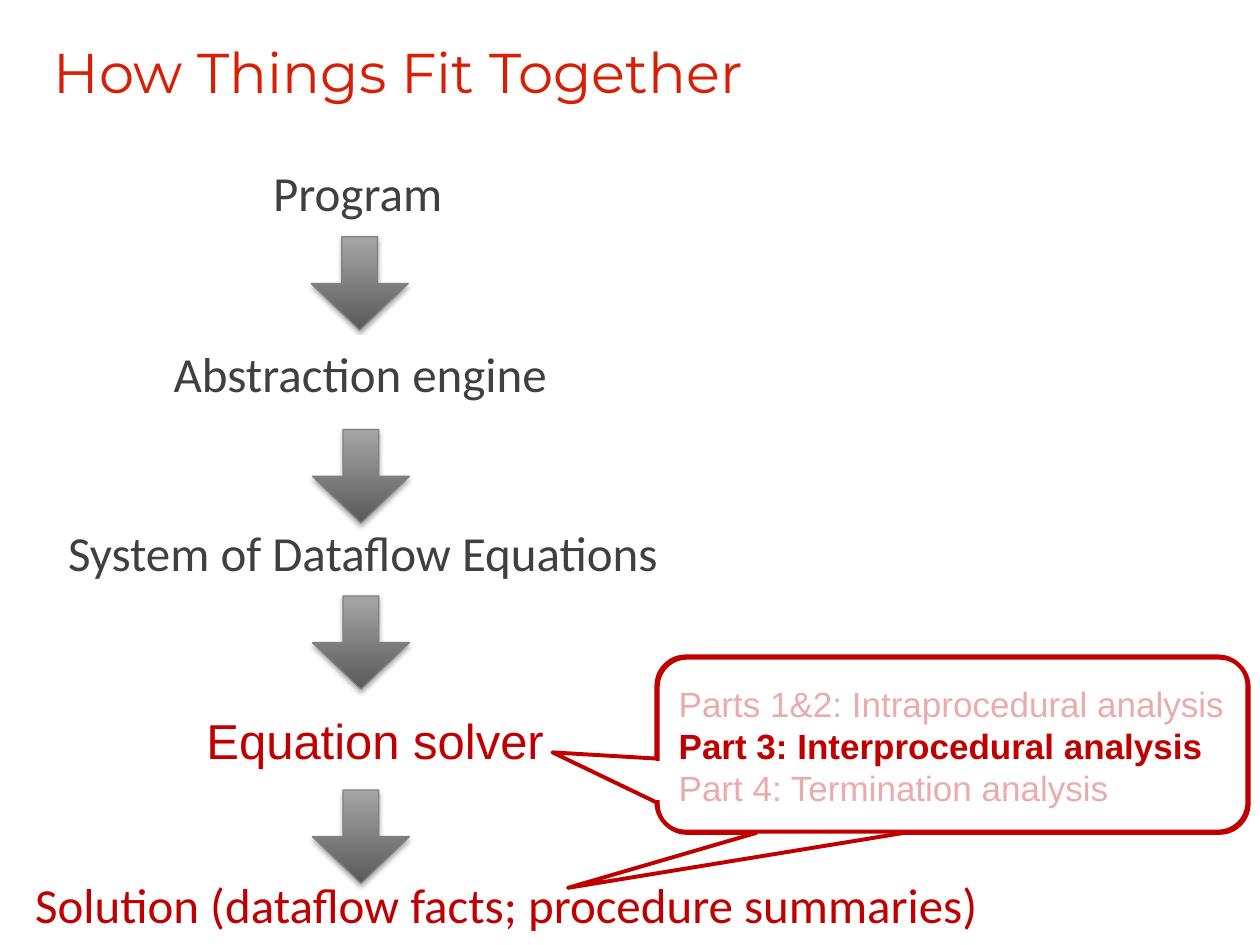
from lxml import etree
from pptx import Presentation
from pptx.dml.color import RGBColor
from pptx.enum.shapes import MSO_CONNECTOR, MSO_SHAPE
from pptx.enum.text import MSO_ANCHOR, MSO_AUTO_SIZE, PP_ALIGN
from pptx.oxml import parse_xml
from pptx.oxml.ns import nsdecls, qn
from pptx.util import Inches, Pt

ARROW = MSO_SHAPE.DOWN_ARROW
RECT = MSO_SHAPE.RECTANGLE
CALLOUT = MSO_SHAPE.ROUNDED_RECTANGULAR_CALLOUT
STRAIGHT = MSO_CONNECTOR.STRAIGHT
TOP, MIDDLE = MSO_ANCHOR.TOP, MSO_ANCHOR.MIDDLE
LEFT = PP_ALIGN.LEFT
NO_FIT = MSO_AUTO_SIZE.NONE
COLS, ROWS = 10, 7.5
PAD = (0.1, 0.05, 0.1, 0.05)
FLUSH = (0, 0, 0, 0)
WHITE, RED, GRAY = "FFFFFF", "C00000", "404040"


def color(value):
    return RGBColor.from_string(value)


class Flow:
    def __init__(self, prs):
        self.s = prs.slides.add_slide(prs.slide_layouts[6])
        self.shapes = self.s.shapes
        self.col = prs.slide_width / COLS
        self.row = prs.slide_height / ROWS

    def place(self, x, y, w, h):
        return [round(v) for v in (x * self.col, y * self.row, w * self.col, h * self.row)]

    def group(self):
        self.shapes = self.s.shapes.add_group_shape().shapes

    def label(self, sp, lines, size, font, ink, pad=PAD, anchor=TOP, wrap=True):
        tf = sp.text_frame
        tf.word_wrap = wrap
        tf.auto_size = NO_FIT
        tf.vertical_anchor = anchor
        tf.margin_left, tf.margin_top, tf.margin_right, tf.margin_bottom = map(Inches, pad)
        for i, (text, bold) in enumerate(lines):
            p = tf.paragraphs[0] if i == 0 else tf.add_paragraph()
            p.alignment = LEFT
            r = p.add_run()
            r.text = text
            r.font.name, r.font.size, r.font.bold = font, Pt(size), bold
            r.font.color.rgb = color(ink)

    def text(self, at, text, size=28, font="Calibri", ink=GRAY, pad=PAD):
        sp = self.shapes.add_textbox(*self.place(*at))
        self.label(sp, [(text, False)], size, font, ink, pad)

    def shape(self, kind, at, fill=None, line=None, width=1, alpha=None, adj=()):
        sp = self.shapes.add_shape(kind, *self.place(*at))
        sp.shadow.inherit = False
        for i, value in enumerate(adj):
            sp.adjustments[i] = value
        if fill:
            sp.fill.solid()
            sp.fill.fore_color.rgb = color(fill)
        else:
            sp.fill.background()
        if alpha:
            clr = sp._element.spPr.find(qn("a:solidFill"))[0]
            etree.SubElement(clr, qn("a:alpha"), val=str(alpha * 1000))
        if line:
            sp.line.color.rgb = color(line)
            sp.line.width = Pt(width)
        else:
            sp.line.fill.background()
        return sp

    def arrow(self, x, y):
        sp = self.shape(ARROW, (x, y, 0.77, 0.74), line="808080", width=0.75, adj=(0.369, 0.5))
        sp.fill.gradient()
        sp.fill.gradient_angle = 90
        for stop, value, pos in zip(sp.fill.gradient_stops, ("595959", "A6A6A6"), (0, 1)):
            stop.color.rgb = color(value)
            stop.position = pos
        effects = sp._element.spPr.find(qn("a:effectLst"))
        effects.append(parse_xml(
            f'<a:outerShdw {nsdecls("a")} blurRad="{Pt(3.1)}" dist="{Pt(1.8)}" '
            'dir="5400000" rotWithShape="0"><a:srgbClr val="000000">'
            '<a:alpha val="35000"/></a:srgbClr></a:outerShdw>'))

    def line(self, x, top, bottom, ink, width):
        ends = self.place(x, top, x, bottom)
        sp = self.shapes.add_connector(STRAIGHT, *ends)
        sp.line.color.rgb = color(ink)
        sp.line.width = Pt(width)
        etree.SubElement(sp._element.spPr, qn("a:effectLst"))

    def callout(self, at, tip):
        return self.shape(CALLOUT, at, line=RED, width=2.25, adj=(*tip, 0.167))


def main():
    prs = Presentation()
    prs.slide_width, prs.slide_height = Inches(10), Inches(7.5)
    flow = Flow(prs)

    flow.line(1, 7.05, 7.25, "EEECE1", 0.25)
    flow.text((0.33, 0.25, 9.42, 0.92), "How Things Fit Together", 32, "Montserrat", "D81E05")
    for x, y in ((2.47, 1.88), (2.48, 3.41), (2.48, 4.73), (2.48, 6.27)):
        flow.arrow(x, y)

    flow.text((2.07, 1.24, 1.66, 0.54), "Program")
    engine = flow.shape(RECT, (1.28, 2.68, 3.2, 0.57), WHITE, WHITE, 3)
    flow.label(engine, [("Abstraction engine", False)], 28, "Calibri", GRAY, wrap=False)
    flow.text((0.54, 4.15, 4.7, 0.54), "System of Dataflow Equations", pad=FLUSH)
    flow.text((1.54, 5.59, 2.94, 0.57), "Equation solver", font="Arial", ink=RED)
    flow.text((0.28, 6.94, 7.6, 0.54), "Solution (dataflow facts; procedure summaries)",
              ink=RED, pad=FLUSH)

    flow.group()
    parts = flow.callout((5.22, 5.22, 4.69, 1.39), (-0.652, 0.814))
    flow.label(parts, [("Parts 1&2: Intraprocedural analysis", False),
                       ("Part 3: Interprocedural analysis", True),
                       ("Part 4: Termination analysis", False)],
               20, "Arial", RED, (0.1, 0.05, 0, 0.05), MIDDLE)
    for veil in ((5.38, 5.35, 4.37, 0.4), (5.38, 6.12, 4.06, 0.31)):
        flow.shape(RECT, veil, WHITE, alpha=67)
    flow.line(5.22, 6.04, 6.35, WHITE, 3.75)
    flow.callout((5.21, 5.21, 4.69, 1.39), (-0.676, 0.048))

    prs.save("out.pptx")


if __name__ == "__main__":
    main()
